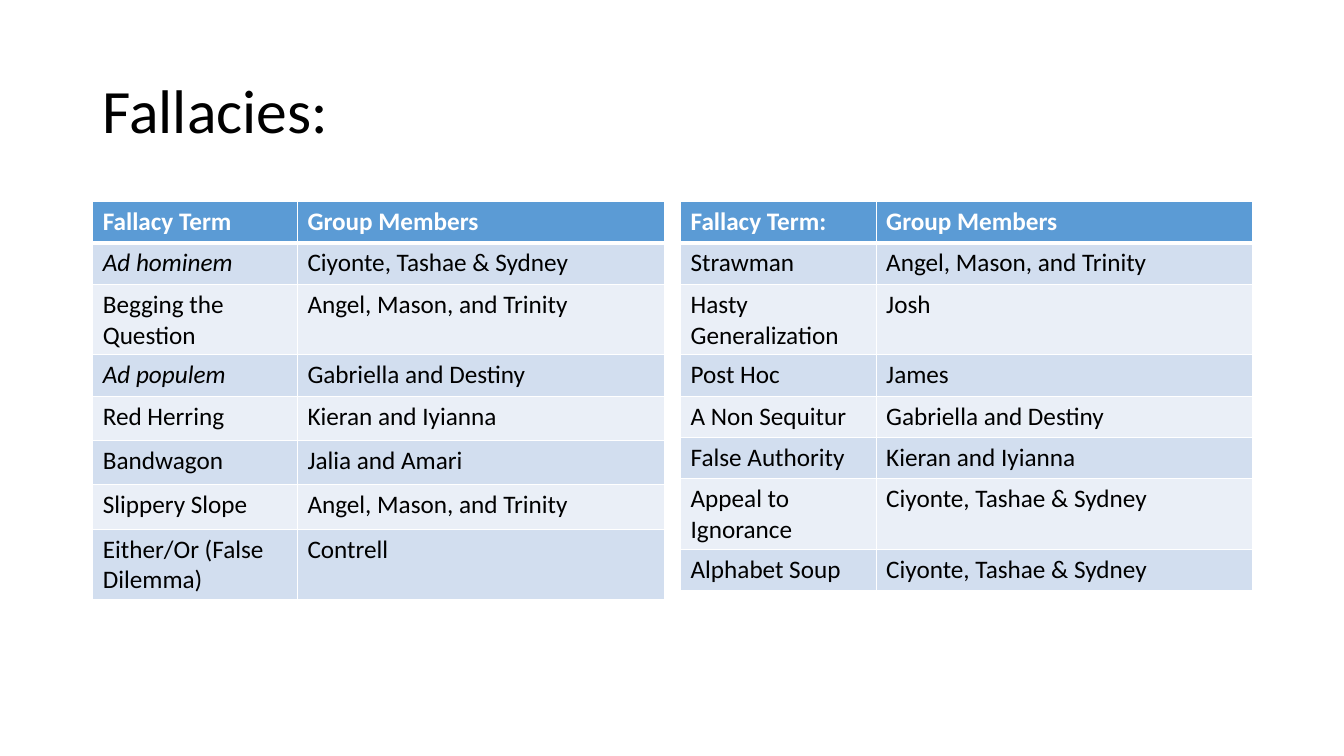
from lxml import etree
from pptx import Presentation
from pptx import util as u
from pptx.dml.color import RGBColor
from pptx.enum import text
from pptx.oxml import ns

BLACK = RGBColor(0x00, 0x00, 0x00)
WHITE = RGBColor(0xFF, 0xFF, 0xFF)
HEADER_BLUE = RGBColor(0x5B, 0x9B, 0xD5)
BANDS = (RGBColor(0xEA, 0xEF, 0xF7), RGBColor(0xD2, 0xDE, 0xEF))
LATIN_TERMS = {"Ad hominem", "Ad populem"}

# Table contents
FIRST_GROUPS = [
    ("Fallacy Term", "Group Members"),
    ("Ad hominem", "Ciyonte, Tashae & Sydney"),
    ("Begging the Question", "Angel, Mason, and Trinity"),
    ("Ad populem", "Gabriella and Destiny"),
    ("Red Herring", "Kieran and Iyianna"),
    ("Bandwagon", "Jalia and Amari"),
    ("Slippery Slope", "Angel, Mason, and Trinity"),
    ("Either/Or (False Dilemma)", "Contrell"),
]
SECOND_GROUPS = [
    ("Fallacy Term:", "Group Members"),
    ("Strawman", "Angel, Mason, and Trinity"),
    ("Hasty Generalization", "Josh"),
    ("Post Hoc", "James"),
    ("A Non Sequitur", "Gabriella and Destiny"),
    ("False Authority", "Kieran and Iyianna"),
    ("Appeal to Ignorance", "Ciyonte, Tashae & Sydney"),
    ("Alphabet Soup", "Ciyonte, Tashae & Sydney"),
]


class SlideBuilder:
    font_name = "Calibri"

    def __init__(self, page):
        self.page = page

    def set_font(self, para, size, color, bold=False, italic=False):
        font = para.font
        font.name, font.size = self.font_name, u.Pt(size)
        font.bold, font.italic = bold, italic
        font.color.rgb = color

    def title(self, words, left, top, width, height):
        box = self.page.shapes.add_textbox(*map(u.Inches, (left, top, width, height)))
        frame = box.text_frame
        frame.word_wrap = True
        frame.vertical_anchor = text.MSO_ANCHOR.MIDDLE
        para = frame.paragraphs[0]
        para.text = words
        para.line_spacing = 0.9
        self.set_font(para, 44, BLACK)

    def borders(self, cell, widths):
        properties = cell._tc.get_or_add_tcPr()
        for side, width in widths.items():
            line = etree.SubElement(properties, ns.qn(f"a:ln{side}"), w=str(u.Pt(width)))
            fill = etree.SubElement(line, ns.qn("a:solidFill"))
            etree.SubElement(fill, ns.qn("a:srgbClr"), val=str(WHITE))

    def table(self, rows, left, top, column_widths, row_heights):
        frame = self.page.shapes.add_table(
            len(rows), len(column_widths), u.Inches(left), u.Inches(top),
            u.Inches(sum(column_widths)), u.Inches(sum(row_heights)))
        table = frame.table
        for column, width in zip(table.columns, column_widths):
            column.width = u.Inches(width)
        for index, (row, height, words) in enumerate(zip(table.rows, row_heights, rows)):
            row.height = u.Inches(height)
            header = index == 0
            for cell, entry in zip(row.cells, words):
                cell.text = entry
                self.set_font(cell.text_frame.paragraphs[0], 18,
                              WHITE if header else BLACK,
                              bold=header, italic=entry in LATIN_TERMS)
                self.borders(cell, {"L": 1, "R": 1, "T": 3 if index == 1 else 1,
                                    "B": 3 if header else 1})
                cell.fill.solid()
                cell.fill.fore_color.rgb = HEADER_BLUE if header else BANDS[index % 2]


def main():
    deck = Presentation()
    deck.slide_width, deck.slide_height = u.Inches(13.33), u.Inches(7.5)
    builder = SlideBuilder(deck.slides.add_slide(deck.slide_layouts[6]))

    # Heading
    builder.title("Fallacies:", 0.92, 0.4, 11.5, 1.45)

    # Two tables side by side
    builder.table(FIRST_GROUPS, 0.92, 2, (2.03, 3.64), [0.41] * 4 + [0.44] * 4)
    builder.table(SECOND_GROUPS, 6.75, 2, (1.94, 3.73), [0.41] * 8)

    deck.save("out.pptx")


if __name__ == "__main__":
    main()
